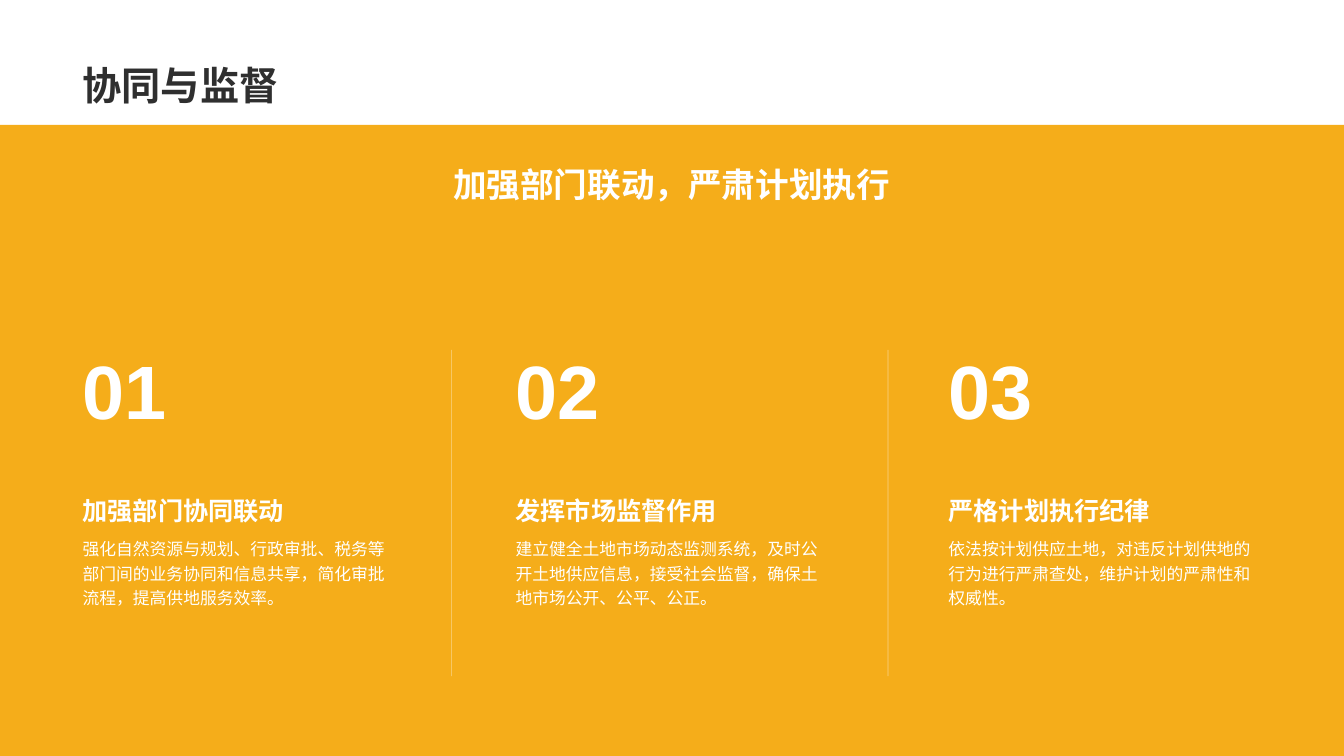
from lxml import etree
from pptx import Presentation
from pptx.dml.color import RGBColor
from pptx.enum.shapes import MSO_CONNECTOR, MSO_SHAPE
from pptx.enum.text import MSO_ANCHOR, PP_ALIGN
from pptx.oxml.ns import qn
from pptx.util import Pt

LINE, RECT = MSO_CONNECTOR.STRAIGHT, MSO_SHAPE.RECTANGLE
TOP, MID, BASE = MSO_ANCHOR.TOP, MSO_ANCHOR.MIDDLE, MSO_ANCHOR.BOTTOM
LEFT, MIDDLE = PP_ALIGN.LEFT, PP_ALIGN.CENTER

HAN, LATIN = "Noto Sans CJK SC", "Arial"
WHITE, DARK, AMBER = "FFFFFF", "2F2F2F", "F5AD1A"
WIDE, HIGH = 960, 540
EDGE, FULL = 51.9, 855.4
BAND = 89.3
COL, STEP = 236.9, 309.25
RULES = (322.6, 634.3)

ITEMS = [
    ("01", "加强部门协同联动",
     "强化自然资源与规划、行政审批、税务等部门间的业务协同和信息共享，简化审批流程，提高供地服务效率。"),
    ("02", "发挥市场监督作用",
     "建立健全土地市场动态监测系统，及时公开土地供应信息，接受社会监督，确保土地市场公开、公平、公正。"),
    ("03", "严格计划执行纪律",
     "依法按计划供应土地，对违反计划供地的行为进行严肃查处，维护计划的严肃性和权威性。"),
]


def color(code):
    return RGBColor.from_string(code)


def add_band(slide):
    band = slide.shapes.add_shape(RECT, 0, Pt(BAND), Pt(WIDE), Pt(HIGH - BAND))
    band.shadow.inherit = False
    band.fill.solid()
    band.fill.fore_color.rgb = color(AMBER)
    band.line.fill.background()


def add_rule(slide, x):
    """Draw a half-transparent white divider between two columns."""
    rule = slide.shapes.add_connector(LINE, Pt(x), Pt(250), Pt(x), Pt(483))
    rule.line.width = Pt(0.5)
    rule.line.color.rgb = color(WHITE)
    props = rule._element.spPr
    tint = next(props.iter(qn("a:srgbClr")))
    etree.SubElement(tint, qn("a:alpha"), val="50000")
    etree.SubElement(props, qn("a:effectLst"))


def add_text(slide, text, box, size, code=WHITE, face=HAN, bold=True,
             anchor=BASE, align=LEFT, space=None):
    frame = slide.shapes.add_textbox(*map(Pt, box)).text_frame
    frame.word_wrap = True
    frame.vertical_anchor = anchor
    frame.text = text
    para = frame.paragraphs[0]
    para.alignment = align
    para.line_spacing = space
    run = para.runs[0]
    font = run.font
    font.size = Pt(size)
    font.bold = bold
    font.color.rgb = color(code)
    font.name = face
    etree.SubElement(run._r.rPr, qn("a:ea"), typeface=face)


def add_item(slide, x, mark, head, body):
    add_text(slide, mark, (x, 186.5, COL, 127.4), 54, face=LATIN)
    add_text(slide, head, (x, 322.6, COL, 56.1), 18)
    add_text(slide, body, (x, 378.7, COL, 104.4), 12,
             bold=False, anchor=TOP, space=1.2)


def main():
    deck = Presentation()
    deck.slide_width, deck.slide_height = Pt(WIDE), Pt(HIGH)
    slide = deck.slides.add_slide(deck.slide_layouts[6])
    add_band(slide)
    add_text(slide, "协同与监督", (EDGE, 10, FULL, 70.6), 28, code=DARK)
    add_text(slide, "加强部门联动，严肃计划执行", (EDGE, BAND, FULL, 84.2), 24,
             anchor=MID, align=MIDDLE)
    for x in RULES:
        add_rule(slide, x)
    for i, item in enumerate(ITEMS):
        add_item(slide, EDGE + i * STEP, *item)
    deck.save("out.pptx")


if __name__ == "__main__":
    main()
